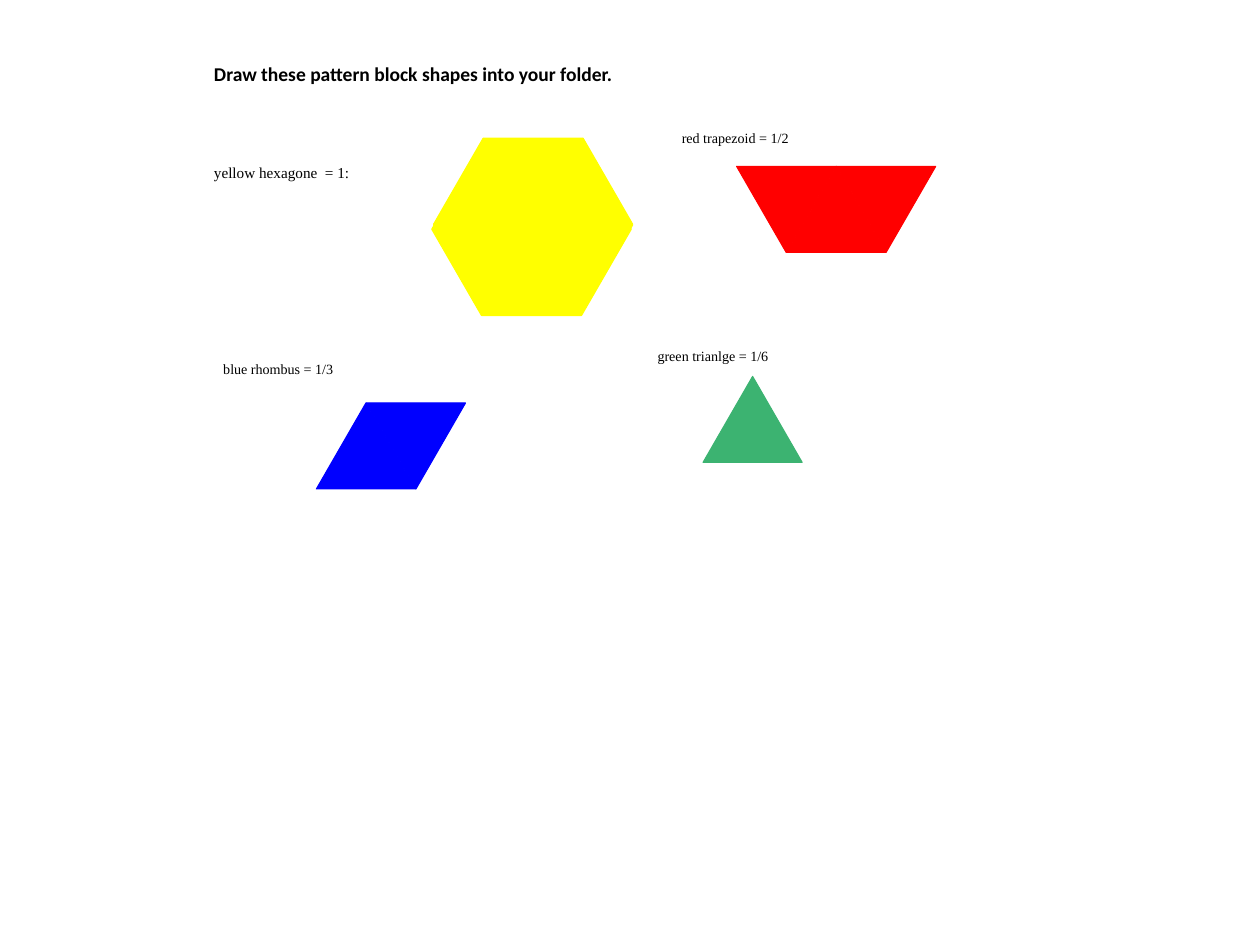
"""Pattern block shapes built from unit triangles, with their fractions."""
from pptx import Presentation
from pptx import util as u
from pptx.dml.color import RGBColor
from pptx.enum import text

HUES = {"yellow": "FFFF00", "blue": "0000FF", "red": "FF0000",
        "green": "3CB371", "ink": "000000"}

deck = Presentation()
deck.slide_width, deck.slide_height = u.Inches(16.13), u.Inches(12.1)
slide = deck.slides.add_slide(deck.slide_layouts[6])
col, row = deck.slide_width / 100, deck.slide_height / 100
SIDE, TALL = 7.87 * col, 9.1 * row
STEP, DROP = 3.97 * col, 9.17 * row


def block(hue, x, y, cols, rows=1, flip=0):
    home = slide.shapes.add_group_shape().shapes if cols > 1 else slide.shapes
    for r in range(rows):
        for c in range(cols):
            left, top = x * col + c * STEP, y * row + r * DROP
            base, tip = top + TALL, top
            if (c + r + flip) % 2:
                base, tip = tip, base
            pen = home.build_freeform(round(left), round(base))
            pen.add_line_segments([(round(left + SIDE), round(base)),
                                   (round(left + SIDE / 2), round(tip))])
            piece = pen.convert_to_shape()
            piece.shadow.inherit = False
            piece.line.width = u.Pt(1)
            for fill in (piece.fill, piece.line.fill):
                fill.solid()
                fill.fore_color.rgb = RGBColor.from_string(HUES[hue])


def label(words, x, y, wide, high, size, name="Times New Roman", bold=False):
    box = slide.shapes.add_textbox(round(x * col), round(y * row),
                                   round(wide * col), round(high * row))
    frame = box.text_frame
    frame.word_wrap = True
    frame.auto_size = text.MSO_AUTO_SIZE.SHAPE_TO_FIT_TEXT
    run = frame.paragraphs[0].add_run()
    run.text = words
    for key, value in {"size": u.Pt(size), "name": name, "bold": bold}.items():
        setattr(run.font, key, value)
    run.font.color.rgb = RGBColor.from_string(HUES["ink"])


block("yellow", 34.28, 15.12, 3, rows=2)
block("blue", 25.11, 42.64, 2)
block("red", 58.46, 17.6, 3, flip=1)
block("green", 55.8, 39.83, 1)

label("yellow hexagone  = 1:", 16.37, 16.86, 18.1, 2.81, 14)
for words, x, y, wide in [("red trapezoid = 1/2", 53.5, 13.31, 19.4),
                          ("blue rhombus = 1/3", 17.11, 37.77, 17.92),
                          ("green trianlge = 1/6", 51.58, 36.36, 18.35)]:
    label(words, x, y, wide, 2.64, 13)

block("yellow", 34.41, 14.63, 3, rows=2)
label("Draw these pattern block shapes into your folder.",
      16.37, 6.12, 39.43, 3.31, 18, "Calibri", True)

deck.save("out.pptx")
